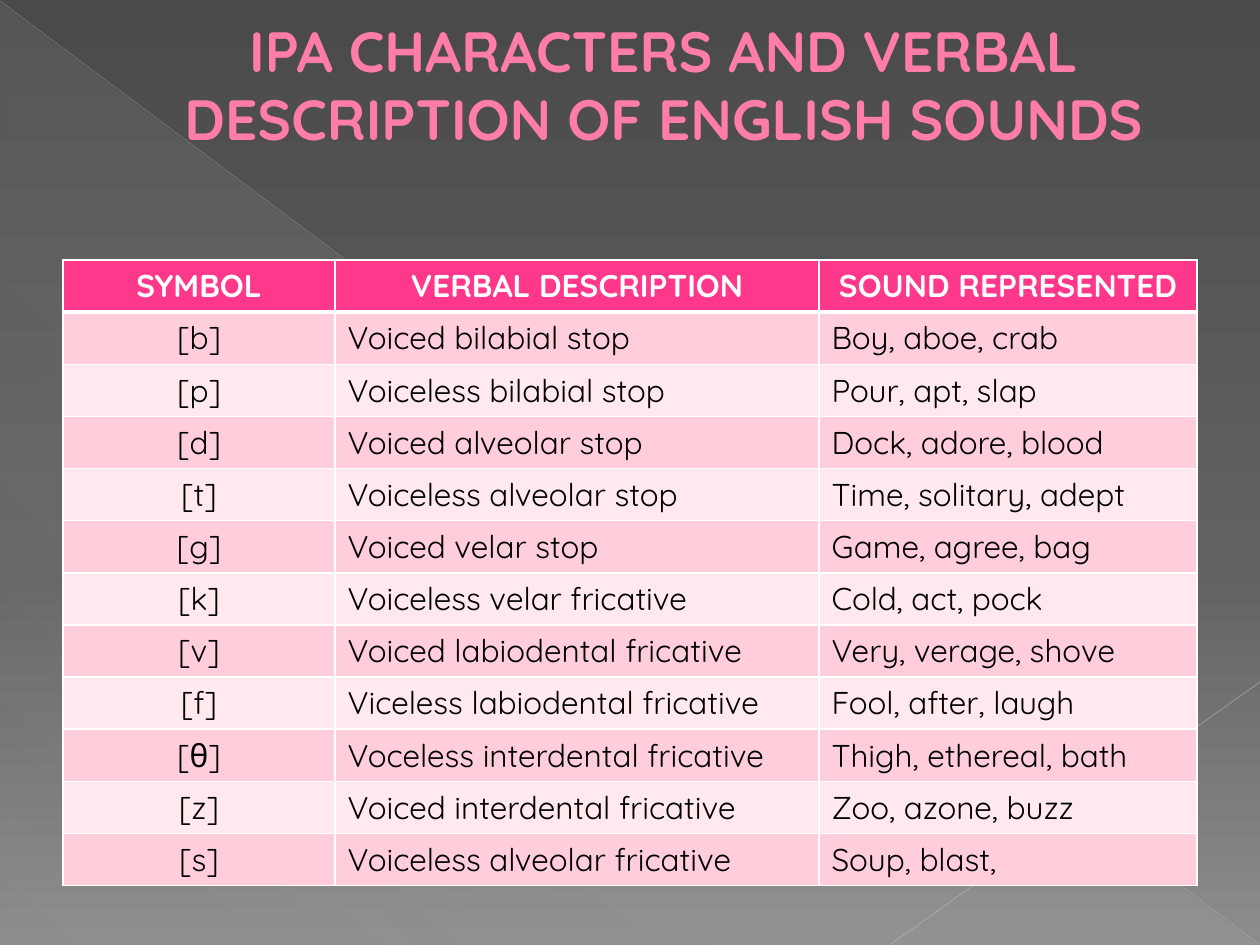
from lxml import etree
from pptx import Presentation
from pptx import util as u
from pptx.dml.color import RGBColor
from pptx.enum import shapes, text
from pptx.oxml.ns import qn

COLORS = {
    "title": "FF7DA7", "title_edge": "B12761", "header": "FF388C",
    "odd": "FFCEDA", "even": "FFE8EE", "white": "FFFFFF", "black": "000000",
    "dark": "4A4A4A", "middle": "626262", "light": "8C8C8C",
    "shade": "D2D2D2", "long_line": "BFBFBF", "short_line": "C6C6C6",
}
HEADERS = ("SYMBOL", "VERBAL DESCRIPTION", "SOUND REPRESENTED")
SOUNDS = (
    ("[b]", "Voiced bilabial stop", "Boy, aboe, crab"),
    ("[p]", "Voiceless bilabial stop", "Pour, apt, slap"),
    ("[d]", "Voiced alveolar stop", "Dock, adore, blood"),
    ("[t]", "Voiceless alveolar stop", "Time, solitary, adept"),
    ("[g]", "Voiced velar stop", "Game, agree, bag"),
    ("[k]", "Voiceless velar fricative", "Cold, act, pock"),
    ("[v]", "Voiced labiodental fricative", "Very, verage, shove"),
    ("[f]", "Viceless labiodental fricative", "Fool, after, laugh"),
    ("[θ]", "Voceless interdental fricative", "Thigh, ethereal, bath"),
    ("[z]", "Voiced interdental fricative", "Zoo, azone, buzz"),
    ("[s]", "Voiceless alveolar fricative", "Soup, blast,"),
)


def px(length):
    return u.Emu(length * 914400 // 126)


def rgb(name):
    return RGBColor.from_string(COLORS[name])


def add_color(parent, name, alpha=100):
    color = etree.SubElement(parent, qn("a:srgbClr"), val=COLORS[name])
    if alpha < 100:
        etree.SubElement(color, qn("a:alpha"), val=str(alpha * 1000))


def make_outline(tag, name, points):
    outline = etree.Element(qn(tag), w=str(u.Pt(points)))
    add_color(etree.SubElement(outline, qn("a:solidFill")), name)
    return outline


class SlideBuilder:
    font = "Quicksand"

    def __init__(self, slide):
        self.slide = slide

    def style(self, para, size, color, bold, align):
        para.alignment = align
        for span in para.runs:
            span.font.name = self.font
            span.font.size = u.Pt(size)
            span.font.bold = bold
            span.font.color.rgb = rgb(color)

    def gradient(self, fill, element, stops, angle):
        """Fill with (percent, colour, alpha) stops at a clockwise angle."""
        fill.gradient()
        gradient = element.find(".//" + qn("a:gradFill"))
        stop_list = gradient.find(qn("a:gsLst"))
        for stop in list(stop_list):
            stop_list.remove(stop)
        for percent, color, alpha in stops:
            stop = etree.SubElement(stop_list, qn("a:gs"), pos=str(percent * 1000))
            add_color(stop, color, alpha)
        gradient.find(qn("a:lin")).set("ang", str(angle * 60000))

    def background(self, stops, angle):
        self.gradient(self.slide.background.fill, self.slide.element, stops, angle)

    def triangle(self, left, top, width, height, stops, angle):
        shape = self.slide.shapes.add_shape(
            shapes.MSO_SHAPE.RIGHT_TRIANGLE, px(left), px(top), px(width), px(height))
        shape.shadow.inherit = False
        shape.line.fill.background()
        self.gradient(shape.fill, shape.element, stops, angle)

    def line(self, start, end, color, points, alpha):
        line = self.slide.shapes.add_connector(
            shapes.MSO_CONNECTOR.STRAIGHT, *map(px, start + end))
        line.line.width = u.Pt(points)
        line.line.color.rgb = rgb(color)
        properties = line.element.spPr
        solid = properties.find(".//" + qn("a:srgbClr"))
        etree.SubElement(solid, qn("a:alpha"), val=str(alpha * 1000))
        etree.SubElement(properties, qn("a:effectLst"))

    def title(self, wording, left, top, width, height):
        box = self.slide.shapes.title
        box.element.getparent().append(box.element)  # in front of the backdrop
        box.left, box.top, box.width, box.height = map(px, (left, top, width, height))
        frame = box.text_frame
        frame.text = wording
        frame.word_wrap = True
        frame.auto_size = text.MSO_AUTO_SIZE.NONE
        frame.vertical_anchor = text.MSO_ANCHOR.MIDDLE
        frame.margin_left, frame.margin_right = px(80), px(13)
        frame.margin_top, frame.margin_bottom = px(0), px(74)
        para = frame.paragraphs[0]
        self.style(para, 32.4, "title", True, text.PP_ALIGN.CENTER)
        para.runs[0].font._element.insert(0, make_outline("a:ln", "title_edge", 0.5))

    def cell(self, cell, wording, fill, color, bold, align, borders):
        cell.text = wording
        self.style(cell.text_frame.paragraphs[0], 18, color, bold, align)
        properties = cell._tc.get_or_add_tcPr()
        for side, points in borders.items():
            properties.append(make_outline("a:ln" + side, "white", points))
        cell.fill.solid()
        cell.fill.fore_color.rgb = rgb(fill)

    def table(self, left, top, widths, row_height, headers, rows):
        records = (headers, *rows)
        table = self.slide.shapes.add_table(
            len(records), len(widths), px(left), px(top),
            px(sum(widths)), px(row_height * len(records))).table
        for column, width in zip(table.columns, widths):
            column.width = px(width)
        for r, record in enumerate(records):
            table.rows[r].height = px(row_height)
            if r == 0:
                fill, color = "header", "white"
                borders = {"L": 1, "R": 1, "T": 1, "B": 3}
            else:
                fill, color = ("odd" if r % 2 else "even"), "black"
                borders = {"L": 1, "R": 1, "B": 1}
            for c, wording in enumerate(record):
                centred = r == 0 or c == 0
                align = text.PP_ALIGN.CENTER if centred else text.PP_ALIGN.LEFT
                self.cell(table.cell(r, c), wording, fill, color, r == 0, align, borders)


def main():
    deck = Presentation()
    deck.slide_width, deck.slide_height = px(1260), px(945)
    builder = SlideBuilder(deck.slides.add_slide(deck.slide_layouts[5]))
    builder.background(
        ((0, "dark", 100), (60, "middle", 100), (100, "light", 100)), 90)
    builder.triangle(
        1, 3, 1257, 942,
        ((0, "shade", 10), (70, "shade", 8), (100, "shade", 1)), 133)
    builder.line((0, 1), (1259, 944), "long_line", 0.39, 35)
    builder.line((1260, 682), (891, 944), "short_line", 0.47, 45)
    builder.title("IPA CHARACTERS AND VERBAL DESCRIPTION OF ENGLISH SOUNDS",
                  63, 36, 1134, 170)
    builder.table(63, 260, (272, 484, 378), 52, HEADERS, SOUNDS)
    deck.save("out.pptx")


if __name__ == "__main__":
    main()
